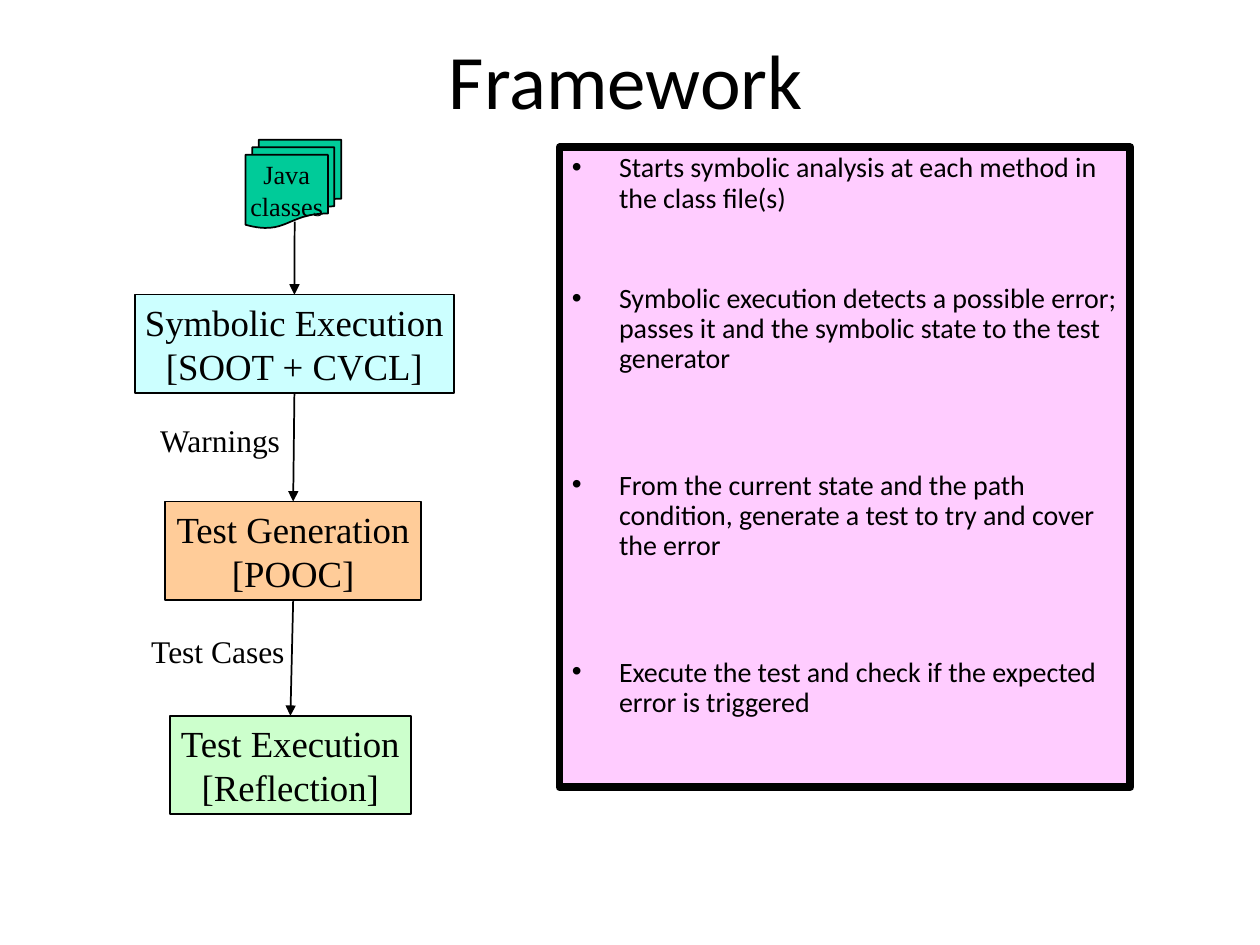
from lxml import etree
from pptx import Presentation
from pptx.dml.color import RGBColor
from pptx.enum.shapes import MSO_CONNECTOR, MSO_SHAPE
from pptx.enum.text import MSO_ANCHOR, MSO_AUTO_SIZE, PP_ALIGN
from pptx.oxml.ns import qn
from pptx.util import Cm, Pt

RECTANGLE, DOCUMENTS = MSO_SHAPE.RECTANGLE, MSO_SHAPE.FLOWCHART_MULTIDOCUMENT
STRAIGHT = MSO_CONNECTOR.STRAIGHT
TOP, MIDDLE = MSO_ANCHOR.TOP, MSO_ANCHOR.MIDDLE
LEFT, CENTER = PP_ALIGN.LEFT, PP_ALIGN.CENTER
GROW = MSO_AUTO_SIZE.SHAPE_TO_FIT_TEXT
NO_FIT = MSO_AUTO_SIZE.NONE
SANS, SERIF = "Calibri", "Times New Roman"
COLORS = {
    "ink": "000000", "notes": "FFCCFF", "classes": "00CB99",
    "execution": "CCFFFF", "generation": "FFCC99", "run": "CCFFCC",
}

prs = Presentation()
prs.slide_width, prs.slide_height = Cm(25.4), Cm(19.05)
slide = prs.slides.add_slide(prs.slide_layouts[6])
shapes = slide.shapes


def write(shape, text, size, font=SERIF, align=CENTER, anchor=TOP,
          wrap=False, fit=GROW, margins=(0.18, 0.1)):
    """Put one paragraph per line of text into the shape."""
    frame = shape.text_frame
    frame.word_wrap, frame.auto_size = wrap, fit
    frame.vertical_anchor = anchor
    frame.margin_left = frame.margin_right = Cm(margins[0])
    frame.margin_top = frame.margin_bottom = Cm(margins[1])
    frame.text = text
    for paragraph in frame.paragraphs:
        paragraph.alignment = align
        for run in paragraph.runs:
            run.font.name, run.font.size = font, Pt(size)
            run.font.color.rgb = RGBColor.from_string(COLORS["ink"])


def add_filled(kind, left, top, width, height, color, line_width=1):
    shape = shapes.add_shape(kind, Cm(left), Cm(top), Cm(width), Cm(height))
    shape.shadow.inherit = False
    shape.fill.solid()
    shape.fill.fore_color.rgb = RGBColor.from_string(COLORS[color])
    shape.line.color.rgb = RGBColor.from_string(COLORS["ink"])
    shape.line.width = Pt(line_width)
    return shape


# Title
title = shapes.add_textbox(Cm(1.19), Cm(0), Cm(22.86), Cm(3.18))
write(title, "Framework", 44, font=SANS, anchor=MIDDLE, wrap=True,
      fit=NO_FIT, margins=(0.25, 0.13))

# Notes beside the flow, each spaced to sit near its step
NOTES = [
    (3.2, "Starts symbolic analysis at each method in the class file(s)"),
    (40, "Symbolic execution detects a possible error; passes it and the "
         "symbolic state to the test generator"),
    (55, "From the current state and the path condition, generate a test "
         "to try and cover the error"),
    (55, "Execute the test and check if the expected error is triggered"),
]
notes = add_filled(RECTANGLE, 11.28, 2.97, 11.51, 12.9, "notes", 4.5)
write(notes, "\n".join(note for _, note in NOTES), 16, font=SANS, align=LEFT,
      wrap=True, fit=NO_FIT, margins=(0.25, 0.13))
for paragraph, (gap, _) in zip(notes.text_frame.paragraphs, NOTES):
    paragraph.line_spacing = 0.9
    paragraph.space_before = Pt(gap)
    properties = paragraph._p.get_or_add_pPr()
    properties.set("marL", str(Cm(0.95)))
    properties.set("indent", str(-Cm(0.95)))
    etree.SubElement(properties, qn("a:buFont"), typeface="Arial")
    etree.SubElement(properties, qn("a:buChar"), char="•")

# Steps of the flow
STEPS = [
    ("Symbolic Execution\n[SOOT + CVCL]", 2.72, 5.94, 6.43, "execution"),
    ("Test Generation\n[POOC]", 3.33, 10.11, 5.16, "generation"),
    ("Test Execution\n[Reflection]", 3.43, 14.43, 4.85, "run"),
]
steps = []
for text, left, top, width, color in STEPS:
    step = add_filled(RECTANGLE, left, top, width, 1.98, color)
    write(step, text, 21)
    steps.append(step)

# Labels on the hand-overs
for text, left, top, width in [("Warnings", 3.05, 8.38, 2.87),
                               ("Test Cases", 2.87, 12.65, 3.12)]:
    label = shapes.add_textbox(Cm(left), Cm(top), Cm(width), Cm(0.97))
    write(label, text, 18, align=LEFT)

# Input documents
classes = add_filled(DOCUMENTS, 4.95, 2.82, 1.93, 1.78, "classes")
write(classes, "Java\nclasses", 15, anchor=MIDDLE, fit=NO_FIT)

# Arrows down the flow
for source, target in zip([None] + steps, steps):
    arrow = shapes.add_connector(STRAIGHT, Cm(5.94), Cm(4.47), Cm(5.94), Cm(5.94))
    if source is not None:
        arrow.begin_connect(source, 2)
    arrow.end_connect(target, 0)
    arrow.line.color.rgb = RGBColor.from_string(COLORS["ink"])
    arrow.line.width = Pt(1)
    etree.SubElement(arrow.line._get_or_add_ln(), qn("a:tailEnd"), type="triangle")
    etree.SubElement(arrow._element.spPr, qn("a:effectLst"))

prs.save("out.pptx")
